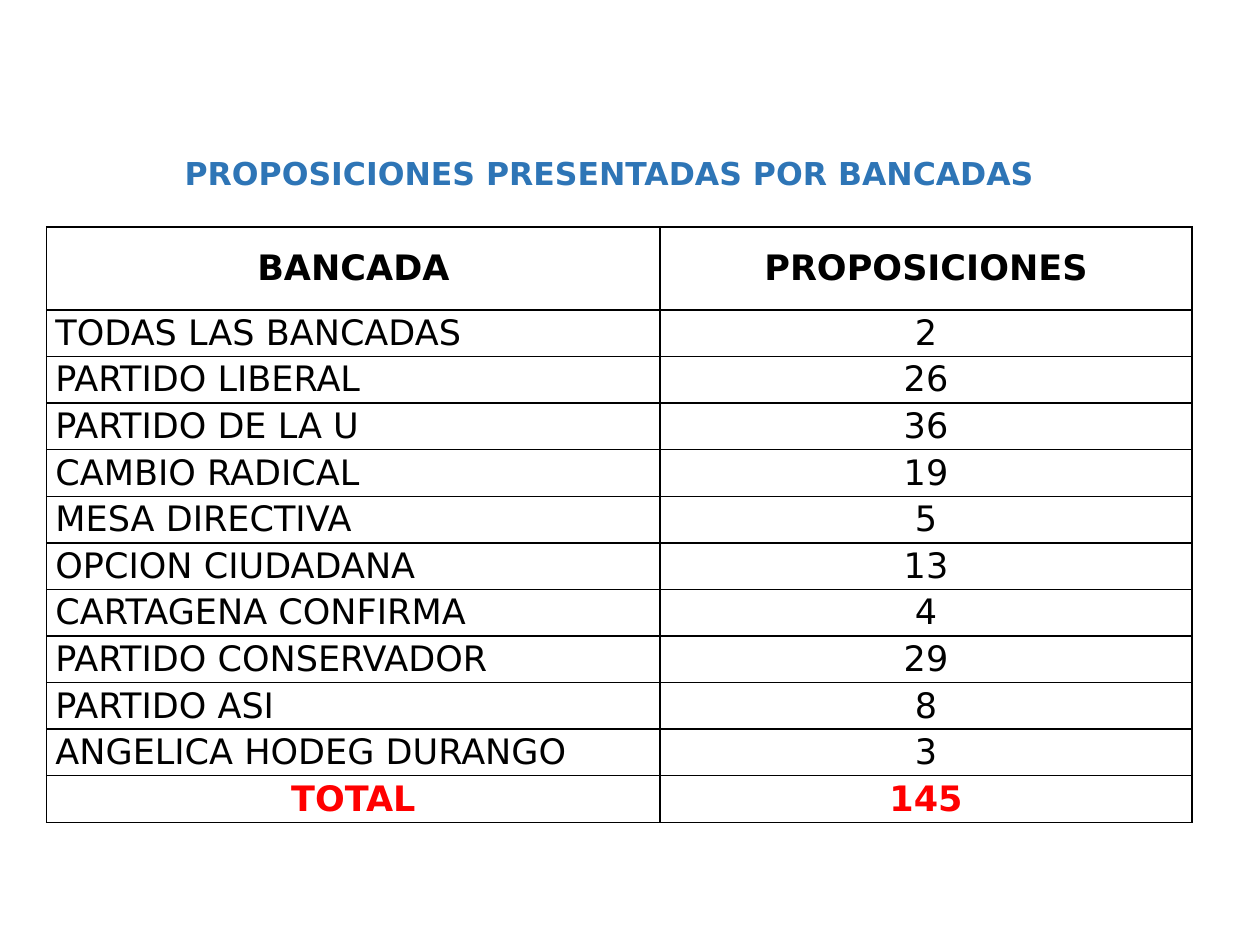
"""Build the slide that counts propositions by bench."""
import dataclasses

import lxml.etree
import pptx
import pptx.dml.color
import pptx.enum.text
import pptx.oxml.ns
import pptx.slide
import pptx.util

Inches = pptx.util.Inches
ALIGN = pptx.enum.text.PP_ALIGN
ANCHOR = pptx.enum.text.MSO_ANCHOR

BENCHES = [
    ("TODAS LAS BANCADAS", "2"),
    ("PARTIDO LIBERAL", "26"),
    ("PARTIDO DE LA U", "36"),
    ("CAMBIO RADICAL", "19"),
    ("MESA DIRECTIVA", "5"),
    ("OPCION CIUDADANA", "13"),
    ("CARTAGENA CONFIRMA", "4"),
    ("PARTIDO CONSERVADOR", "29"),
    ("PARTIDO ASI", "8"),
    ("ANGELICA HODEG DURANGO", "3"),
]


@dataclasses.dataclass(frozen=True)
class Theme:
    font: str = "DejaVu Sans"
    heading: str = "2E75B6"
    ink: str = "000000"
    total: str = "FF0000"
    heading_size: int = 18
    table_size: int = 20
    border_width: int = 1


@dataclasses.dataclass
class SlideBuilder:
    theme: Theme
    slide: pptx.slide.Slide

    def add_wording(self, frame, wording, size, color, bold, align):
        paragraph = frame.paragraphs[0]
        paragraph.alignment = align
        run = paragraph.add_run()
        run.text = wording
        run.font.name = self.theme.font
        run.font.size = pptx.util.Pt(size)
        run.font.bold = bold
        run.font.color.rgb = pptx.dml.color.RGBColor.from_string(color)

    def heading(self, wording, left, top, width, height):
        title = self.slide.shapes.title
        title.left, title.top = Inches(left), Inches(top)
        title.width, title.height = Inches(width), Inches(height)
        frame = title.text_frame
        frame.word_wrap = False
        frame.auto_size = pptx.enum.text.MSO_AUTO_SIZE.SHAPE_TO_FIT_TEXT
        frame.vertical_anchor = ANCHOR.MIDDLE
        self.add_wording(frame, wording, self.theme.heading_size,
                         self.theme.heading, True, ALIGN.CENTER)

    def border(self, cell):
        qn = pptx.oxml.ns.qn
        properties = cell._tc.get_or_add_tcPr()
        for side in ("a:lnL", "a:lnR", "a:lnT", "a:lnB"):
            line = lxml.etree.SubElement(properties, qn(side))
            line.set("w", str(pptx.util.Pt(self.theme.border_width)))
            fill = lxml.etree.SubElement(line, qn("a:solidFill"))
            lxml.etree.SubElement(fill, qn("a:srgbClr")).set("val", self.theme.ink)

    def cell(self, cell, wording, color, bold, align):
        self.border(cell)
        cell.fill.background()
        cell.vertical_anchor = ANCHOR.MIDDLE
        cell.margin_left = cell.margin_right = Inches(0.07)
        cell.margin_top = cell.margin_bottom = 0
        self.add_wording(cell.text_frame, wording, self.theme.table_size,
                         color, bold, align)

    def table(self, records, left, top, widths, heights):
        table = self.slide.shapes.add_table(
            len(records), len(widths), Inches(left), Inches(top),
            Inches(sum(widths)), Inches(sum(heights))).table
        for column, width in zip(table.columns, widths):
            column.width = Inches(width)
        last = len(records) - 1
        for index, (record, height) in enumerate(zip(records, heights)):
            table.rows[index].height = Inches(height)
            color = self.theme.total if index == last else self.theme.ink
            bold = index in (0, last)
            for position, wording in enumerate(record):
                align = ALIGN.CENTER if bold or position else ALIGN.LEFT
                self.cell(table.cell(index, position), wording, color, bold, align)


def main():
    presentation = pptx.Presentation()
    presentation.slide_width, presentation.slide_height = Inches(10), Inches(7.5)
    slide = presentation.slides.add_slide(presentation.slide_layouts[5])
    builder = SlideBuilder(Theme(), slide)
    builder.heading("PROPOSICIONES PRESENTADAS POR BANCADAS", 1.28, 1.17, 7.11, 0.4)
    total = sum(int(count) for _, count in BENCHES)
    records = [("BANCADA", "PROPOSICIONES"), *BENCHES, ("TOTAL", str(total))]
    heights = [0.66] + [0.37] * (len(records) - 1)
    builder.table(records, 0.37, 1.8, [4.87, 4.22], heights)
    presentation.save("out.pptx")


if __name__ == "__main__":
    main()
